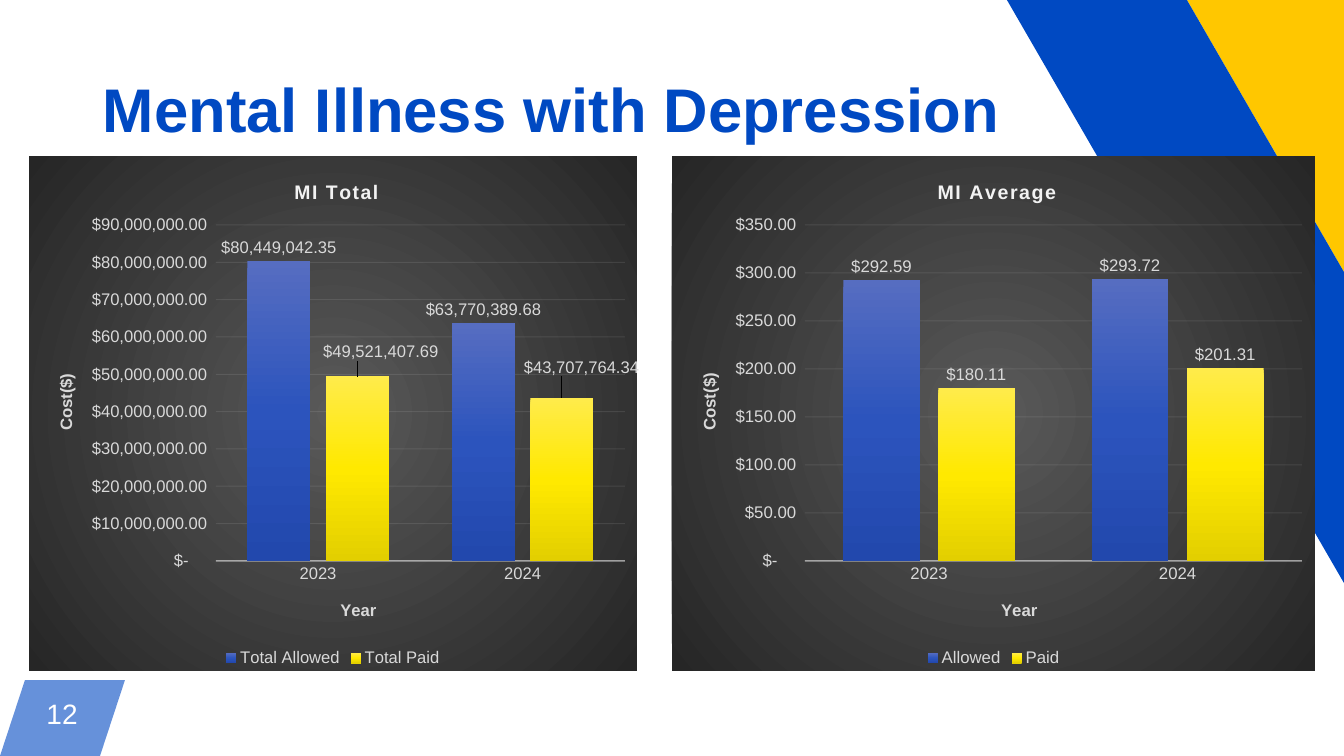
"""Build the slide comparing depression costs in two column charts."""
from dataclasses import dataclass

from lxml import etree
from pptx import Presentation
from pptx.chart.data import CategoryChartData
from pptx.dml.color import RGBColor
from pptx.enum.chart import XL_CHART_TYPE as CT, XL_LABEL_POSITION as LP
from pptx.enum.chart import XL_LEGEND_POSITION as LEG, XL_TICK_MARK as TM
from pptx.enum.text import MSO_ANCHOR as ANC, PP_ALIGN as AL
from pptx.oxml import parse_xml
from pptx.oxml.ns import nsdecls, qn
from pptx.util import Pt

PX = 914400 / 100.8
FONT = "Arial"
COLORS = {"blue": "0049C2", "gold": "FFC700", "white": "FFFFFF",
          "label": "D9D9D9", "pale": "F2F2F2"}
BAR_STOPS = (((0, "566DC1"), (50, "2C54BD"), (100, "2248AD")),
             ((0, "FFEB4B"), (50, "FFE900"), (100, "E3CF00")))
BACK_STOPS = ((0, "595959"), (100, "262626"))
LINEAR = '<a:lin ang="5400000" scaled="0"/>'
RADIAL = ('<a:path path="circle"><a:fillToRect l="50000" t="50000" '
          'r="50000" b="50000"/></a:path>')
MONEY = r'_("$"* #,##0.00_);_("$"* \(#,##0.00\);_("$"* "-"??_);_(@_)'


@dataclass
class Poly:
    points: tuple
    color: str
    alpha: int = 100


@dataclass
class Text:
    box: tuple
    text: str
    size: int
    color: str
    bold: bool = False
    align: AL = AL.LEFT
    inset: int = 10
    spacing: object = 0.9


@dataclass
class Panel:
    box: tuple
    title: str
    title_at: tuple
    year_at: tuple
    cost_at: tuple
    plot: tuple
    series: tuple
    top: float
    step: float
    nudges: tuple = ()


POLYS = (
    Poly(((25, 680), (125, 680), (100, 756), (0, 756)), "blue", 60),
    Poly(((1187, 0), (1344, 0), (1344, 272)), "gold"),
    Poly(((1007, 0), (1187, 0), (1344, 272), (1344, 583)), "blue"),
)
TEXTS = (
    Text((25, 680, 74, 76), "12", 20, "white", align=AL.CENTER, inset=4,
         spacing=Pt(17.7)),
    Text((93, 40, 1159, 146), "Mental Illness with Depression", 44, "blue",
         True),
)
PANELS = (
    Panel((29, 156, 615, 515), "MI Total", (265, 20), (312, 441), (24, 214),
          (189, 69, 414, 336),
          (("Total Allowed", (80449042.35, 63770389.68)),
           ("Total Paid", (49521407.69, 43707764.34))), 9e7, 1e7,
          ((24, -11), (20, -17))),
    Panel((672, 156, 643, 515), "MI Average", (262, 20), (326, 441),
          (24, 214), (133, 69, 497, 336),
          (("Allowed", (292.59, 293.72)), ("Paid", (180.11, 201.31))),
          350, 50),
)


def rgb(name: str) -> RGBColor:
    return RGBColor.from_string(COLORS[name])


def emu(box: tuple) -> list[int]:
    return [round(v * PX) for v in box]


def set_font(font, size: int, color: str, bold: bool = False) -> None:
    font.name, font.size, font.bold = FONT, Pt(size), bold
    font.color.rgb = rgb(color)


def set_alpha(element, percent: int) -> None:
    for clr in element.iter(qn("a:srgbClr")):
        etree.SubElement(clr, qn("a:alpha")).set("val", str(percent * 1000))


def gradient(stops: tuple, direction: str):
    gs = "".join(f'<a:gs pos="{pos * 1000}"><a:srgbClr val="{c}"/></a:gs>'
                 for pos, c in stops)
    return parse_xml(f'<a:gradFill {nsdecls("a")} rotWithShape="1">'
                     f'<a:gsLst>{gs}</a:gsLst>{direction}</a:gradFill>')


def place(parent, panel: Panel, box: tuple, modes: bool = True) -> None:
    for old in parent.findall(qn("c:layout")):
        parent.remove(old)
    layout = etree.Element(qn("c:layout"))
    manual = etree.SubElement(layout, qn("c:manualLayout"))
    items = []
    if len(box) == 4:
        items.append(("layoutTarget", "inner"))
    if modes:
        items += [("xMode", "edge"), ("yMode", "edge")]
    sizes = panel.box[2:] * 2
    items += [(k, f"{v / d:.4f}") for k, v, d in zip("xywh", box, sizes)]
    for key, val in items:
        etree.SubElement(manual, qn(f"c:{key}")).set("val", val)
    lead = [e for e in parent if e.tag in (qn("c:tx"), qn("c:idx"))]
    parent.insert(len(lead), layout)


def add_poly(s, poly: Poly) -> None:
    fb = s.shapes.build_freeform(*poly.points[0], scale=PX)
    fb.add_line_segments(poly.points[1:], close=True)
    sp = fb.convert_to_shape()
    sp.shadow.inherit = False
    sp.fill.solid()
    sp.fill.fore_color.rgb = rgb(poly.color)
    sp.line.fill.background()
    if poly.alpha < 100:
        set_alpha(sp.element.spPr, poly.alpha)


def add_text(s, item: Text) -> None:
    tf = s.shapes.add_textbox(*emu(item.box)).text_frame
    tf.word_wrap = True
    tf.vertical_anchor = ANC.MIDDLE
    tf.margin_left = tf.margin_right = round(item.inset * PX)
    tf.margin_top = tf.margin_bottom = round(min(item.inset, 5) * PX)
    p = tf.paragraphs[0]
    p.alignment, p.line_spacing = item.align, item.spacing
    r = p.add_run()
    r.text = item.text
    set_font(r.font, item.size, item.color, item.bold)


def add_title(title, panel: Panel, text: str, at: tuple, size: int,
              color: str):
    tf = title.text_frame
    r = tf.paragraphs[0].add_run()
    r.text = text
    set_font(r.font, size, color, True)
    element = next(tf.paragraphs[0].runs[0].font._element.iterancestors(
        qn("c:title")))
    place(element, panel, at)
    return element


def style_axes(chart, panel: Panel) -> None:
    cat, val = chart.category_axis, chart.value_axis
    for axis in (cat, val):
        axis.major_tick_mark = axis.minor_tick_mark = TM.NONE
        set_font(axis.tick_labels.font, 12, "label")
    add_title(cat.axis_title, panel, "Year", panel.year_at, 12, "label")
    cost = add_title(val.axis_title, panel, "Cost($)", panel.cost_at, 12,
                     "label")
    next(cost.iter(qn("a:bodyPr"))).set("rot", "-5400000")
    val.minimum_scale, val.maximum_scale = 0, panel.top
    val.major_unit = panel.step
    val.tick_labels.number_format = MONEY
    val.tick_labels.number_format_is_linked = False
    val.format.line.fill.background()
    for fmt, width, alpha in ((cat.format, 1, 54),
                              (val.major_gridlines.format, 0.75, 10)):
        fmt.line.color.rgb = rgb("pale")
        fmt.line.width = Pt(width)
        set_alpha(fmt.line.color._xFill, alpha)


def style_series(chart, panel: Panel) -> None:
    plot = chart.plots[0]
    plot.gap_width, plot.overlap, plot.vary_by_categories = 100, -24, False
    for ser, stops in zip(plot.series, BAR_STOPS):
        ser.format.fill.solid()
        ser.invert_if_negative = False
        labels = ser.data_labels
        labels.show_value, labels.position = True, LP.OUTSIDE_END
        set_font(labels.font, 12, "label")
    for i in range(len(panel.nudges)):
        label = plot.series[1].points[i].data_label
        label.position = LP.OUTSIDE_END
        set_font(label.font, 12, "label")
    for el, stops in zip(chart.element.xpath("//c:ser/c:spPr"), BAR_STOPS):
        el.replace(el.find(qn("a:solidFill")), gradient(stops, LINEAR))
    for el, nudge in zip(chart.element.xpath("//c:dLbl"), panel.nudges):
        place(el, panel, nudge, modes=False)


def add_panel(s, panel: Panel) -> None:
    data = CategoryChartData(number_format=MONEY)
    data.categories = ["2023", "2024"]
    for name, values in panel.series:
        data.add_series(name, values)
    chart = s.shapes.add_chart(CT.COLUMN_CLUSTERED, *emu(panel.box),
                               data).chart
    set_font(chart.font, 12, "label")
    title = add_title(chart.chart_title, panel, panel.title, panel.title_at,
                      14, "pale")
    next(title.iter(qn("a:rPr"))).set("spc", "100")
    chart.has_legend = True
    chart.legend.position, chart.legend.include_in_layout = LEG.BOTTOM, False
    set_font(chart.legend.font, 12, "label")
    style_axes(chart, panel)
    style_series(chart, panel)
    place(chart.element.xpath("//c:plotArea")[0], panel, panel.plot)
    back = etree.Element(qn("c:spPr"))
    back.append(gradient(BACK_STOPS, RADIAL))
    etree.SubElement(etree.SubElement(back, qn("a:ln")), qn("a:noFill"))
    chart.element.find(qn("c:txPr")).addprevious(back)


def main() -> None:
    prs = Presentation()
    prs.slide_width, prs.slide_height = emu((1344, 756))
    s = prs.slides.add_slide(prs.slide_layouts[6])
    for poly in POLYS:
        add_poly(s, poly)
    for item in TEXTS:
        add_text(s, item)
    for panel in PANELS:
        add_panel(s, panel)
    prs.save("out.pptx")


if __name__ == "__main__":
    main()
